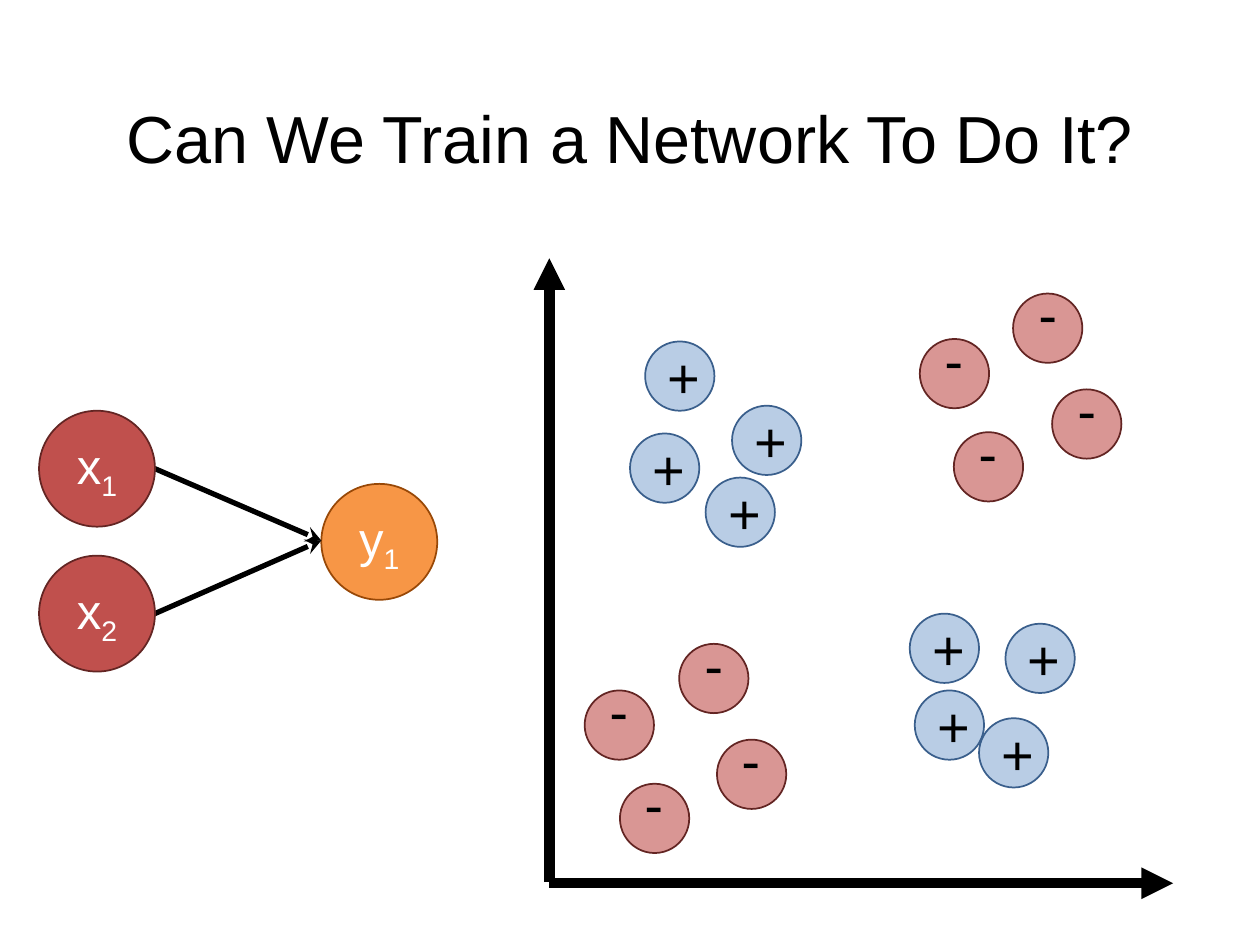
from lxml.etree import SubElement
from pptx import Presentation
from pptx.dml.color import RGBColor as RGB
from pptx.enum.shapes import MSO_CONNECTOR as Link, MSO_SHAPE as Shape
from pptx.enum.text import MSO_ANCHOR as Anchor, PP_ALIGN as Align
from pptx.oxml.ns import qn
from pptx.util import Inches, Pt

BLACK = RGB(0x00, 0x00, 0x00)
WHITE = RGB(0xFF, 0xFF, 0xFF)
RED = RGB(0xC0, 0x50, 0x4D)
MAROON = RGB(0x63, 0x25, 0x23)
ORANGE = RGB(0xF7, 0x96, 0x46)
BROWN = RGB(0x98, 0x48, 0x07)
PINK = RGB(0xD9, 0x96, 0x94)
SKY = RGB(0xB9, 0xCD, 0xE5)
NAVY = RGB(0x3A, 0x5F, 0x8C)

NODE = 0.92
DOT = 0.55
PLUS = [(5.12, 2.71), (5, 3.44), (5.81, 3.22), (5.6, 3.79),
        (7.22, 4.87), (7.26, 5.48), (7.98, 4.95), (7.77, 5.7)]
MINUS = [(7.57, 3.43), (7.3, 2.69), (8.35, 3.09), (8.04, 2.33),
         (4.92, 6.22), (4.64, 5.48), (5.69, 5.87), (5.39, 5.11)]


def write(shape, text, size, color=BLACK, sub="", space=None):
    """Put centred text in a shape, with an optional subscript."""
    frame = shape.text_frame
    frame.word_wrap = True
    frame.vertical_anchor = Anchor.MIDDLE
    para = frame.paragraphs[0]
    para.alignment = Align.CENTER
    if space:
        para.line_spacing = space
    for part in filter(None, (text, sub)):
        run = para.add_run()
        run.text = part
        run.font.name = "Arial"
        run.font.size = Pt(size)
        run.font.color.rgb = color
    if sub:
        run.font._element.set("baseline", "-25000")


def circle(shapes, left, top, size, fill, edge):
    """Draw a filled circle with a thin edge."""
    shape = shapes.add_shape(Shape.OVAL, Inches(left), Inches(top),
                             Inches(size), Inches(size))
    shape.shadow.inherit = False
    shape.fill.solid()
    shape.fill.fore_color.rgb = fill
    shape.line.color.rgb = edge
    shape.line.width = Pt(1)
    return shape


def arrow(shapes, start, end, width, head):
    """Draw a black straight arrow."""
    line = shapes.add_connector(Link.STRAIGHT, *map(Inches, start + end))
    line.line.color.rgb = BLACK
    line.line.width = Pt(width)
    SubElement(line.line._get_or_add_ln(), qn("a:tailEnd"), type=head)
    SubElement(line._element.spPr, qn("a:effectLst"))


def node(shapes, left, top, name, sub, fill, edge):
    """Draw a network node with its subscripted name."""
    shape = circle(shapes, left, top, NODE, fill, edge)
    write(shape, name, 28, color=WHITE, sub=sub)


def point(shapes, left, top, sign, fill, edge, flip=False):
    """Draw a sample of one class, flipped upright if asked."""
    shape = circle(shapes, left, top, DOT, fill, edge)
    if flip:
        shape._element.spPr.xfrm.set("flipV", "1")
    write(shape, sign, 32)


def axes(shapes):
    """Draw the two plot axes as a group."""
    group = shapes.add_group_shape().shapes
    arrow(group, (4.36, 7), (4.36, 2.05), 6, "triangle")
    arrow(group, (4.36, 7.01), (9.31, 7.01), 6, "triangle")


def network(shapes):
    """Draw two inputs feeding one output as a group."""
    group = shapes.add_group_shape().shapes
    left, tops = 0.31, (3.26, 4.41)
    node(group, 2.55, 3.84, "y", "1", ORANGE, BROWN)
    for top in tops:
        arrow(group, (left + NODE, top + NODE / 2), (2.55, 4.29), 3, "stealth")
    for num, top in enumerate(tops, 1):
        node(group, left, top, "x", str(num), RED, MAROON)


def main():
    """Build the slide and save it."""
    deck = Presentation()
    deck.slide_width, deck.slide_height = Inches(10), Inches(7.5)
    shapes = deck.slides.add_slide(deck.slide_layouts[6]).shapes
    title = shapes.add_textbox(Inches(0.69), Inches(0.4),
                               Inches(8.62), Inches(1.45))
    write(title, "Can We Train a Network To Do It?", 38, space=0.9)
    axes(shapes)
    network(shapes)
    for left, top in PLUS:
        point(shapes, left, top, "+", SKY, NAVY)
    for left, top in MINUS:
        point(shapes, left, top, "-", PINK, MAROON, flip=True)
    deck.save("out.pptx")


if __name__ == "__main__":
    main()
